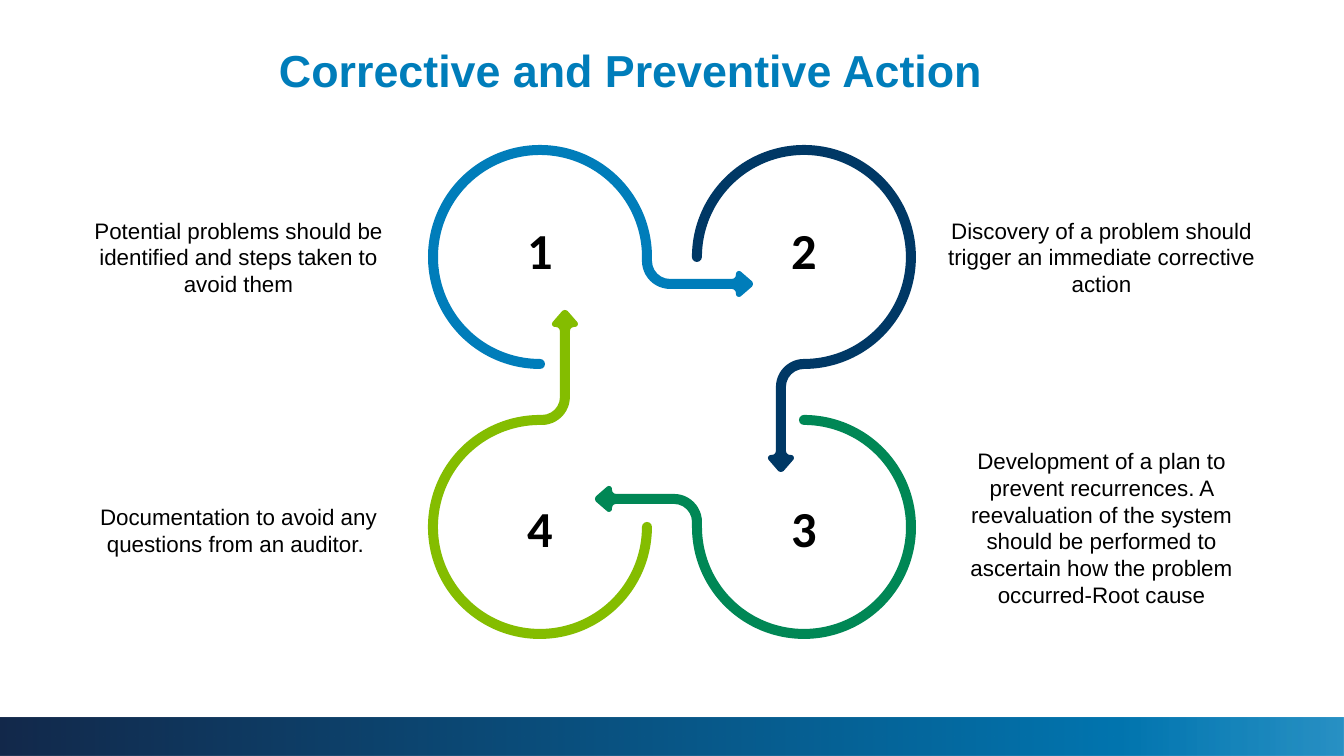
from copy import deepcopy
from math import cos, radians, sin

from lxml import etree
from pptx import Presentation
from pptx.dml.color import RGBColor
from pptx.enum.shapes import MSO_SHAPE
from pptx.enum.text import MSO_ANCHOR, PP_ALIGN
from pptx.oxml.ns import qn
from pptx.util import Pt

RECTANGLE = MSO_SHAPE.RECTANGLE
MIDDLE = MSO_ANCHOR.MIDDLE
LEFT, CENTER = PP_ALIGN.LEFT, PP_ALIGN.CENTER
PX = 914400 / 100.8
DEGREE = 60000
COLORS = {
    "blue": "007DBA",
    "navy": "003865",
    "green": "008755",
    "lime": "84BD00",
    "black": "000000",
    "footer_dark": "13294B",
    "footer_mid": "0275AF",
}


def emu(px):
    return round(px * PX)


def color(name):
    return RGBColor.from_string(COLORS[name])


def loop_arcs(drop, reach):
    bend = drop - 23
    return [
        (0, 0, 112, 90, 180),
        (0, 0, 112, 180, 270),
        (0, 0, 112, 270, 360),
        (130, bend, 18, 180, 90),
        (reach - 21, drop - 9, 4, 90, 0),
        (reach - 14, drop - 10, 3, 180, 315),
        (reach - 4, drop, 4, -45, 0),
        (reach - 4, drop, 4, 0, 45),
        (reach - 14, drop + 10, 3, 45, 180),
        (reach - 21, drop + 9, 4, 0, -90),
        (130, bend, 28, 90, 180),
        (0, 0, 102, 360, 90),
        (0, 107, 5, -90, 90),
    ]


class SlideBuilder:
    def __init__(self, slide):
        self.slide = slide
        self.font = "Arial"

    def text(self, content, x, y, w, h, size, fill="black", bold=False,
             font=None, align=CENTER, margins=(0, 0), spacing=None):
        box = self.slide.shapes.add_textbox(emu(x), emu(y), emu(w), emu(h))
        frame = box.text_frame
        frame.word_wrap = True
        frame.vertical_anchor = MIDDLE
        frame.margin_left = frame.margin_right = emu(margins[0])
        frame.margin_top = frame.margin_bottom = emu(margins[1])
        paragraph = frame.paragraphs[0]
        paragraph.alignment = align
        paragraph.line_spacing = spacing
        run = paragraph.add_run()
        run.text = content
        run.font.name = font or self.font
        run.font.size = Pt(size)
        run.font.bold = bold
        run.font.color.rgb = color(fill)

    def loop(self, cx, cy, turn, drop, reach, fill):
        c, s = cos(radians(turn)), sin(radians(turn))
        arcs = loop_arcs(drop, reach)
        points = []
        for arc_x, arc_y, radius, start, end in arcs:
            for angle in (radians(start), radians(end)):
                x, y = arc_x + radius * cos(angle), arc_y + radius * sin(angle)
                points.append((emu(cx + x * c - y * s), emu(cy + x * s + y * c)))
        builder = self.slide.shapes.build_freeform(*points[0], scale=1.0)
        builder.add_line_segments(points[1:], close=True)
        shape = builder.convert_to_shape()
        chords = shape._element.xpath(".//a:lnTo")[::2]
        for chord, (_, _, radius, start, end) in zip(chords, arcs):
            curve = etree.Element(
                qn("a:arcTo"), wR=str(emu(radius)), hR=str(emu(radius)),
                stAng=str((start + turn) % 360 * DEGREE),
                swAng=str((end - start) * DEGREE))
            chord.getparent().replace(chord, curve)
        shape.shadow.inherit = False
        shape.fill.solid()
        shape.fill.fore_color.rgb = color(fill)
        shape.line.fill.background()

    def gradient_bar(self, x, y, w, h, stops):
        bar = self.slide.shapes.add_shape(RECTANGLE, emu(x), emu(y), emu(w), emu(h))
        bar.shadow.inherit = False
        bar.line.fill.background()
        bar.fill.gradient()
        bar.fill.gradient_angle = 0
        stop_list = bar._element.xpath(".//a:gsLst")[0]
        while len(stop_list) < len(stops):
            stop_list.append(deepcopy(stop_list[-1]))
        for index, (position, name, opacity) in enumerate(stops):
            stop = bar.fill.gradient_stops[index]
            stop.position = position
            stop.color.rgb = color(name)
            etree.SubElement(stop_list[index][0], qn("a:alpha"), val=str(opacity * 1000))


def main():
    deck = Presentation()
    deck.slide_width, deck.slide_height = emu(1344), emu(756)
    page = SlideBuilder(deck.slides.add_slide(deck.slide_layouts[6]))

    page.gradient_bar(0, 718, 1344, 38, [
        (0, "footer_dark", 100), (0.83, "footer_mid", 100), (1, "blue", 84)])
    page.text("Corrective and Preventive Action", 269, 0, 869, 146, 32, "blue",
              bold=True, align=LEFT, margins=(10, 5), spacing=0.9)

    left, right, top, bottom = 540, 804, 257, 527
    steps = [
        (left, top, 27, 213, "blue", 80, 257, 92,
         "Potential problems should be identified and steps taken to avoid them"),
        (right, top, 23, 215, "navy", 943, 257, 92,
         "Discovery of a problem should trigger an immediate corrective action"),
        (right, bottom, 28, 209, "green", 943, 527, 173,
         "Development of a plan to prevent recurrences. A reevaluation of the system "
         "should be performed to ascertain how the problem occurred-Root cause"),
        (left, bottom, 25, 217, "lime", 80, 530, 65,
         "Documentation to avoid any questions from an auditor. "),
    ]
    number_tops = {top: 219, bottom: 497}
    for index, (cx, cy, drop, reach, fill, x, middle, height, note) in enumerate(steps):
        page.loop(cx, cy, index * 90, drop, reach, fill)
        page.text(str(index + 1), cx - 29, number_tops[cy], 58, 61, 36,
                  bold=True, font="Calibri")
        page.text(note, x, middle - height // 2, 317, height, 16, margins=(0, 5))

    deck.save("out.pptx")


if __name__ == "__main__":
    main()
